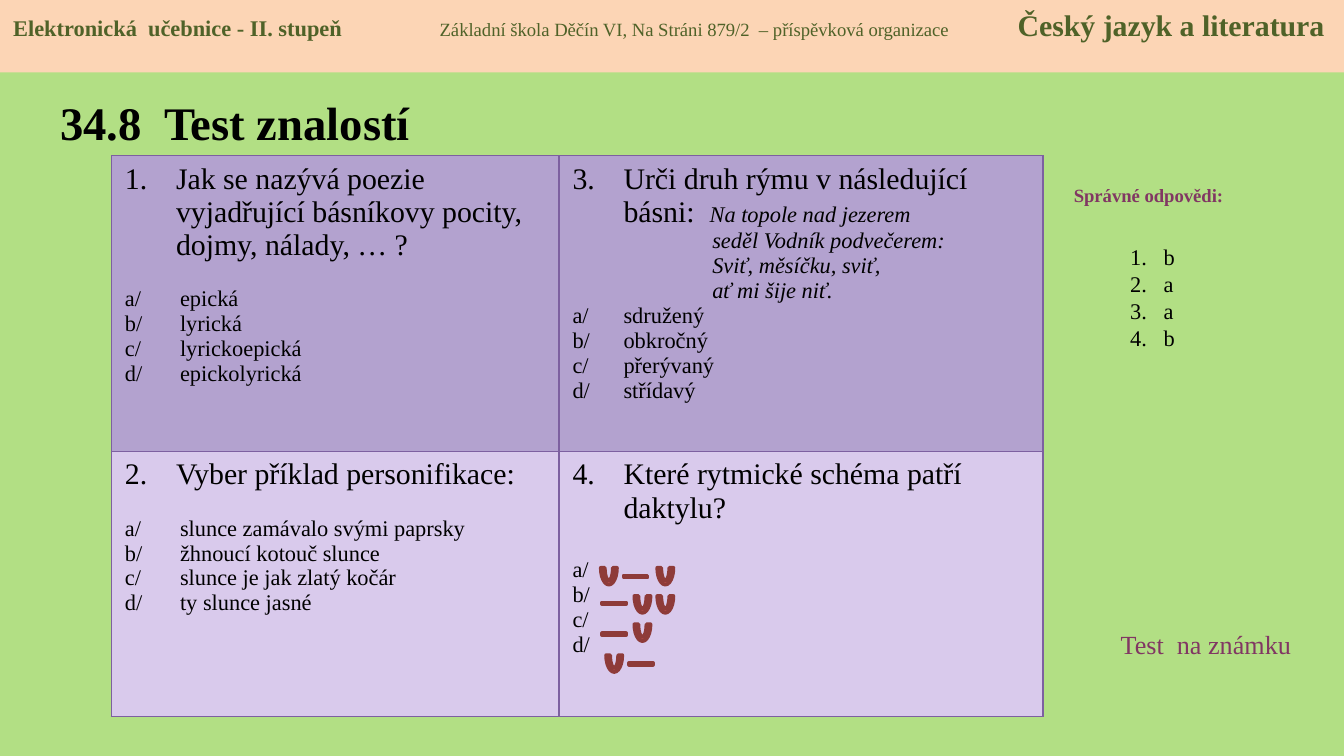
from lxml import etree
from pptx import Presentation
from pptx.dml.color import RGBColor
from pptx.enum.shapes import MSO_SHAPE
from pptx.enum.text import MSO_ANCHOR, PP_ALIGN
from pptx.oxml.ns import qn
from pptx.util import Inches, Pt

RECT, MINUS, ARC = MSO_SHAPE.RECTANGLE, MSO_SHAPE.MATH_MINUS, MSO_SHAPE.BLOCK_ARC
TOP, MIDDLE = MSO_ANCHOR.TOP, MSO_ANCHOR.MIDDLE
LEFT, CENTER = PP_ALIGN.LEFT, PP_ALIGN.CENTER

FONT = "Times New Roman"
BLACK = RGBColor(0x00, 0x00, 0x00)
GREEN = RGBColor(0xB2, 0xDF, 0x84)
PEACH = RGBColor(0xFC, 0xD5, 0xB5)
OLIVE = RGBColor(0x4F, 0x62, 0x28)
PLUM = RGBColor(0x81, 0x37, 0x63)
BORDER = RGBColor(0x7D, 0x60, 0xA0)
ROW_FILLS = [RGBColor(0xB3, 0xA2, 0xCF), RGBColor(0xD9, 0xCA, 0xEC)]
RED = RGBColor(0xC0, 0x50, 0x4D)
DARK_RED = RGBColor(0x8E, 0x3B, 0x39)


def add_par(tf, runs, margin=0, hang=0, before=0, number=None, align=LEFT):
    """Add a paragraph of (text, font values) runs, numbered if asked."""
    p = tf.paragraphs[0]
    if p.runs:
        p = tf.add_paragraph()
    p.alignment = align
    p.space_before = Pt(before)
    pPr = p._p.get_or_add_pPr()
    pPr.set("marL", str(Inches(margin)))
    pPr.set("indent", str(-Inches(hang)))
    if number:
        etree.SubElement(pPr, qn("a:buAutoNum"), type="arabicPeriod", startAt=str(number))
    for text, values in runs:
        r = p.add_run()
        r.text = text
        r.font.color.rgb = values.get("color", BLACK)
        for name, value in {"name": FONT, "size": Pt(12), **values}.items():
            if name != "color":
                setattr(r.font, name, value)
    return p


def add_box(x, y, w, h, anchor=TOP):
    tf = s.shapes.add_textbox(Inches(x), Inches(y), Inches(w), Inches(h)).text_frame
    tf.word_wrap = True
    tf.vertical_anchor = anchor
    return tf


prs = Presentation()
prs.slide_width = Inches(10)
prs.slide_height = prs.slide_width * 9 // 16
s = prs.slides.add_slide(prs.slide_layouts[6])
s.background.fill.solid()
s.background.fill.fore_color.rgb = GREEN

# Title
add_par(add_box(0.35, 0.58, 3.19, 0.65, MIDDLE),
        [("34.8  Test znalostí", {"size": Pt(25), "bold": True})])

# Question table: question runs, verses, options, option indent, gap before the options
BIG = {"size": Pt(16)}
VERSE = {"italic": True}
CELLS = [
    [(1, [("Jak se nazývá poezie vyjadřující básníkovy pocity, dojmy, nálady, … ?", BIG)], [],
      ["epická", "lyrická", "lyrickoepická", "epickolyrická"], 0.41, 13.3),
     (3, [("Urči druh rýmu v následující básni:  ", BIG), ("Na topole nad jezerem", VERSE)],
      ["seděl Vodník podvečerem:", "Sviť, měsíčku, sviť,", "ať mi šije niť."],
      ["sdružený", "obkročný", "přerývaný", "střídavý"], 0.38, 0)],
    [(2, [("Vyber příklad personifikace:", BIG)], [],
      ["slunce zamávalo svými paprsky", "žhnoucí kotouč slunce",
       "slunce je jak zlatý kočár", "ty slunce jasné"], 0.41, 13.3),
     (4, [("Které rytmické schéma patří daktylu?", BIG)], [], [""] * 4, 0, 17.7)],
]
table = s.shapes.add_table(2, 2, Inches(0.83), Inches(1.16), Inches(6.93), Inches(4.17)).table
table.first_row = table.horz_banding = False
for column, width in zip(table.columns, [3.33, 3.6]):
    column.width = Inches(width)
for row, height in zip(table.rows, [2.2, 1.97]):
    row.height = Inches(height)

for i, row in enumerate(CELLS):
    for j, (number, question, verses, options, indent, gap) in enumerate(row):
        cell = table.cell(i, j)
        cell.fill.solid()
        cell.fill.fore_color.rgb = ROW_FILLS[i]
        tcPr = cell._tc.get_or_add_tcPr()
        for k, side in enumerate(["lnL", "lnR", "lnT", "lnB"]):
            ln = etree.Element(qn("a:" + side), w=str(Pt(0.75)))
            fill = etree.SubElement(ln, qn("a:solidFill"))
            etree.SubElement(fill, qn("a:srgbClr"), val=str(BORDER))
            tcPr.insert(k, ln)
        tf = cell.text_frame
        add_par(tf, question, 0.38, 0.38, number=number)
        for verse in verses:
            add_par(tf, [(verse, VERSE)], 1.04)
        for k, (letter, option) in enumerate(zip("abcd", options)):
            text = f"{letter}/\t{option}" if option else f"{letter}/"
            add_par(tf, [(text, {})], indent, indent, before=0 if k else gap)

# Answers
add_par(add_box(7.76, 1.32, 1.57, 0.27),
        [("Správné odpovědi:", {"size": Pt(10), "bold": True, "color": PLUM})], align=CENTER)
tf = add_box(8.31, 1.55, 0.55, 1.31)
tf.margin_top = Inches(0.26)
for number, answer in enumerate("baab", 1):
    add_par(tf, [(answer, {})], 0.25, 0.25, number=number)

# Grading note
add_par(add_box(8.24, 4.63, 1.57, 0.34),
        [("Test  na známku", {"size": Pt(14), "color": PLUM})])

# Header band: its three parts are parted by widely spaced blanks
sp = s.shapes.add_shape(RECT, 0, 0, Inches(10), Inches(0.54))
sp.shadow.inherit = False
sp.fill.solid()
sp.fill.fore_color.rgb = PEACH
sp.line.fill.background()
tf = sp.text_frame
tf.word_wrap = True
tf.vertical_anchor = TOP
p = add_par(tf, [
    ("Elektronická  učebnice - II. stupeň", {"bold": True, "color": OLIVE}),
    (" ", {}),
    ("Základní škola Děčín VI, Na Stráni 879/2  – příspěvková organizace",
     {"size": Pt(10), "color": OLIVE}),
    (" ", {}),
    ("Český jazyk a literatura", {"size": Pt(16), "bold": True, "color": OLIVE}),
])
for r, spacing in zip(p.runs[1::2], [49, 34]):
    r._r.get_or_add_rPr().set("spc", str(spacing * 100))

# Rhythm signs: long syllables are dashes, short ones are cups
DASHES = [(4.61, 4.26), (4.45, 4.46), (4.45, 4.69), (4.65, 4.91)]
CUPS = [(4.47, 4.1), (4.89, 4.1), (4.72, 4.31), (4.89, 4.31), (4.72, 4.52), (4.51, 4.75)]
for kind, places, w, h in [(MINUS, DASHES, 0.24, 0.06), (ARC, CUPS, 0.12, 0.25)]:
    for x, y in places:
        sp = s.shapes.add_shape(kind, Inches(x), Inches(y), Inches(w), Inches(h))
        sp.shadow.inherit = False
        sp.fill.solid()
        sp.fill.fore_color.rgb = RED
        sp.line.color.rgb = DARK_RED
        sp.line.width = Pt(2)
        if kind == ARC:
            sp._element.spPr.find(qn("a:xfrm")).set("flipV", "1")

prs.save("out.pptx")
